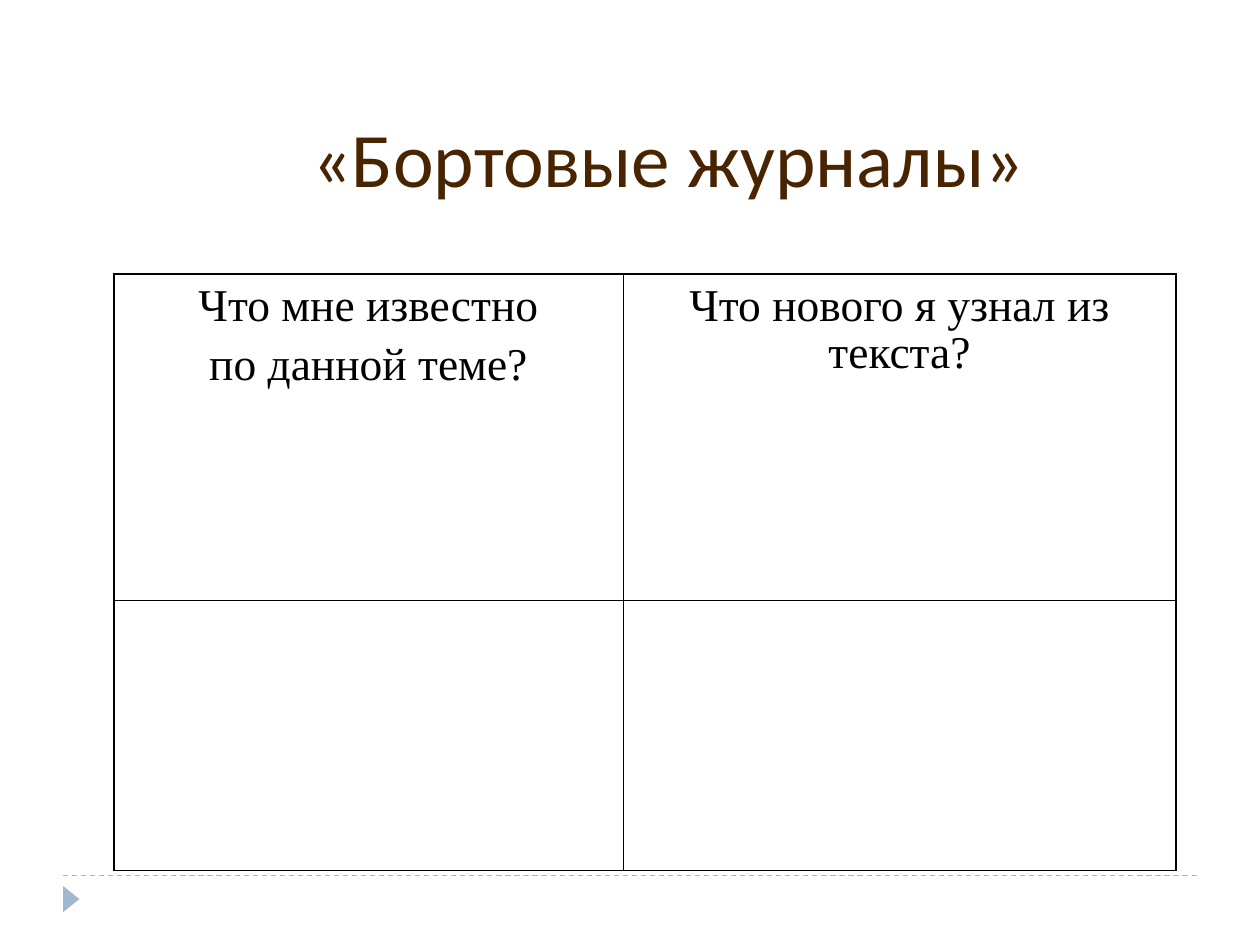
from dataclasses import dataclass

from lxml.etree import SubElement
from pptx import Presentation
from pptx.dml.color import RGBColor as Rgb
from pptx.enum.dml import MSO_LINE
from pptx.enum.shapes import MSO_CONNECTOR, MSO_SHAPE
from pptx.enum.text import MSO_ANCHOR, MSO_AUTO_SIZE, PP_ALIGN
from pptx.oxml import parse_xml
from pptx.oxml.ns import nsdecls, qn
from pptx.util import Cm, Pt


@dataclass(frozen=True)
class Theme:
    title_color: Rgb = Rgb(0x48, 0x24, 0x00)
    text_color: Rgb = Rgb(0, 0, 0)
    accent: Rgb = Rgb(0x9F, 0xB8, 0xCD)
    title_font: str = "Calibri"
    text_font: str = "Times New Roman"
    title_size: Pt = Pt(44)
    text_size: Pt = Pt(26)
    footer_width: Pt = Pt(0.75)
    outer_border: Pt = Pt(1.08)
    inner_border: Pt = Pt(0.45)


THEME = Theme()
HEADINGS = [
    ["Что мне известно", "по данной теме?"],
    ["Что нового я узнал из текста?"],
]
COLUMN_WIDTHS = [Cm(10.26), Cm(11.15)]
ROW_HEIGHTS = [Cm(6.58), Cm(5.44)]


def style_paragraph(paragraph, font, size, color):
    paragraph.alignment = PP_ALIGN.CENTER
    paragraph.font.name = font
    paragraph.font.size = size
    paragraph.font.color.rgb = color


def set_title(slide, wording):
    title = slide.shapes.title
    title.left, title.top = Cm(5.38), Cm(1.04)
    title.width, title.height = Cm(16.2), Cm(3.18)
    frame = title.text_frame
    frame.text = wording
    frame.auto_size = MSO_AUTO_SIZE.NONE
    frame.vertical_anchor = MSO_ANCHOR.BOTTOM
    style_paragraph(frame.paragraphs[0], THEME.title_font, THEME.title_size, THEME.title_color)


def add_footer_rule(slide):
    rule = slide.shapes.add_connector(
        MSO_CONNECTOR.STRAIGHT, Cm(1.27), Cm(17.65), Cm(24.13), Cm(17.65)
    )
    rule.line.color.rgb = THEME.accent
    rule.line.width = THEME.footer_width
    rule.line.dash_style = MSO_LINE.DASH
    SubElement(rule.element.spPr, qn("a:effectLst"))


def add_footer_marker(slide):
    marker = slide.shapes.add_shape(
        MSO_SHAPE.ISOSCELES_TRIANGLE, Cm(1.17), Cm(17.96), Cm(0.53), Cm(0.33)
    )
    marker.rotation = 90
    marker.shadow.inherit = False
    marker.fill.solid()
    marker.fill.fore_color.rgb = THEME.accent
    marker.line.fill.background()


def set_borders(cell, widths):
    properties = cell._tc.get_or_add_tcPr()
    for index, (side, width) in enumerate(widths.items()):
        border = parse_xml(
            f'<a:ln{side} {nsdecls("a")} w="{int(width)}"><a:solidFill>'
            f'<a:srgbClr val="{THEME.text_color}"/></a:solidFill></a:ln{side}>'
        )
        properties.insert(index, border)


def fill_heading(cell, lines):
    cell.margin_left = cell.margin_right = Cm(0.18)
    cell.margin_top, cell.margin_bottom = Cm(0.2), Cm(0.13)
    frame = cell.text_frame
    frame.text = "\n".join(lines)
    for paragraph in frame.paragraphs:
        style_paragraph(paragraph, THEME.text_font, THEME.text_size, THEME.text_color)
        paragraph.line_spacing = 0.93
        paragraph.space_before = Pt(7)


def add_journal_table(slide):
    rows, columns = len(ROW_HEIGHTS), len(COLUMN_WIDTHS)
    journal = slide.shapes.add_table(
        rows, columns, Cm(2.3), Cm(5.53), sum(COLUMN_WIDTHS), sum(ROW_HEIGHTS)
    ).table
    journal.first_row = journal.horz_banding = False
    for column, width in zip(journal.columns, COLUMN_WIDTHS):
        column.width = width
    for row, height in zip(journal.rows, ROW_HEIGHTS):
        row.height = height

    def border(is_outer):
        return THEME.outer_border if is_outer else THEME.inner_border

    for r in range(rows):
        for c in range(columns):
            cell = journal.cell(r, c)
            cell.fill.background()
            set_borders(cell, {
                "L": border(c == 0),
                "R": border(c == columns - 1),
                "T": border(r == 0),
                "B": border(r == rows - 1),
            })
    for c, lines in enumerate(HEADINGS):
        fill_heading(journal.cell(0, c), lines)


def main():
    deck = Presentation()
    deck.slide_width, deck.slide_height = Cm(25.4), Cm(19.05)
    slide = deck.slides.add_slide(deck.slide_layouts[5])
    add_footer_rule(slide)
    add_footer_marker(slide)
    set_title(slide, "«Бортовые журналы»")
    add_journal_table(slide)
    deck.save("out.pptx")


if __name__ == "__main__":
    main()
